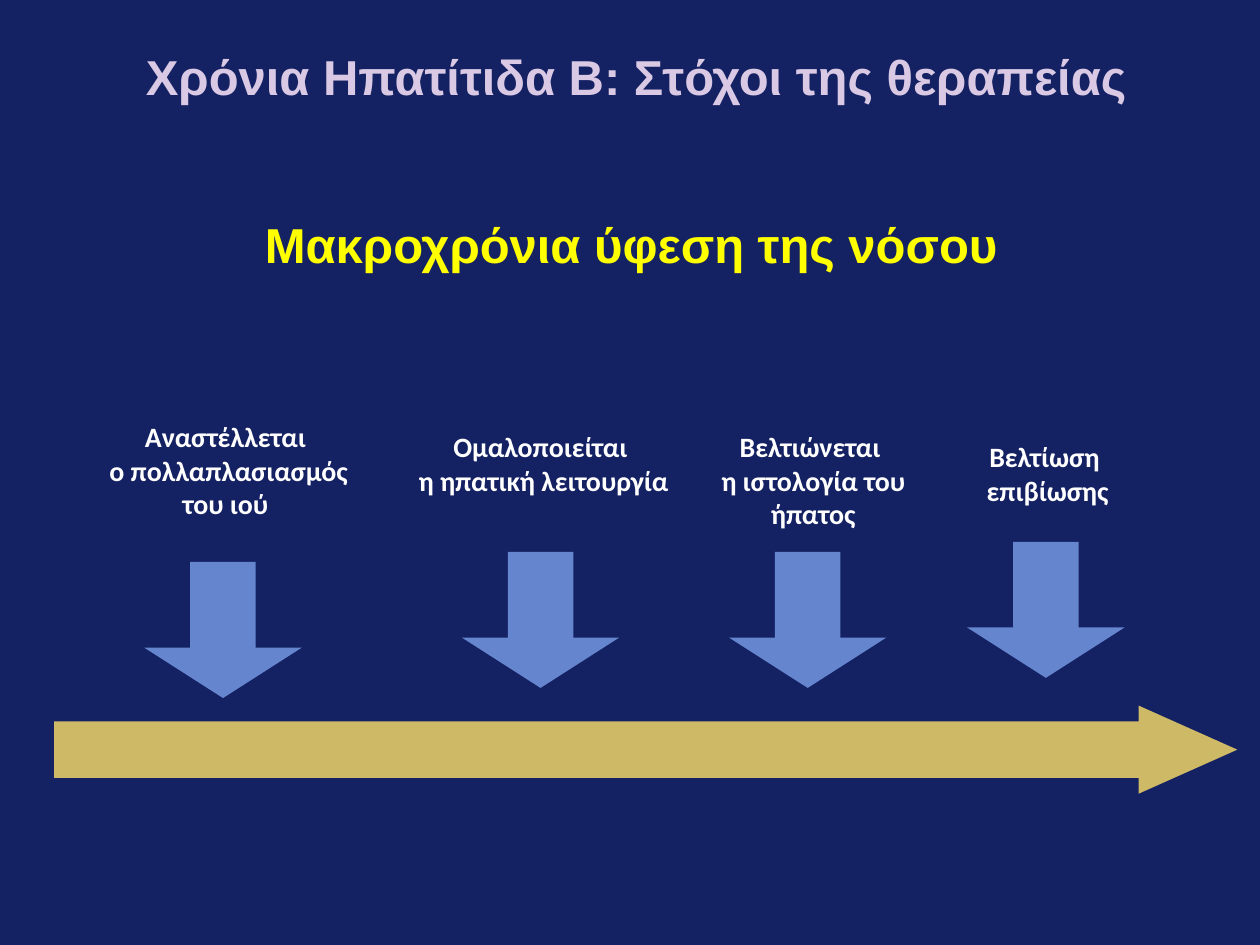
"""Build the slide on treatment goals for chronic hepatitis B."""
from pptx import Presentation
from pptx import util as u
from pptx.dml.color import RGBColor
from pptx.enum import shapes, text

NAVY = RGBColor(0x14, 0x21, 0x62)
LILAC = RGBColor(0xDA, 0xC9, 0xE4)
YELLOW = RGBColor(0xFF, 0xFF, 0x00)
WHITE = RGBColor(0xFF, 0xFF, 0xFF)
BLUE = RGBColor(0x65, 0x85, 0xCF)
GOLD = RGBColor(0xCE, 0xB9, 0x66)

WIDTH, HEIGHT = 10, 7.5
HEADINGS = [
    ("Χρόνια Ηπατίτιδα Β: Στόχοι της θεραπείας", 0.55, 0.21, LILAC),
    ("Μακροχρόνια ύφεση της νόσου", 0.51, 1.54, YELLOW),
]
GOALS = [
    {"lines": ["Αναστέλλεται", " ο πολλαπλασιασμός του ιού"],
     "label": (0.67, 2.24, 0.91), "center": 1.77, "level": 0},
    {"lines": ["Ομαλοποιείται", " η ηπατική λειτουργία"],
     "label": (3.11, 2.36, 0.64), "center": 4.29, "level": 1},
    {"lines": ["Βελτιώνεται ", "η ιστολογία του ήπατος"],
     "label": (5.47, 1.97, 0.91), "center": 6.41, "level": 1},
    {"lines": ["Βελτίωση", " επιβίωσης"],
     "label": (7.67, 1.24, 0.64), "center": 8.3, "level": 2, "wrap": False},
]
LABEL_TOP, ARROW_TOP, LEVEL_STEP = 3.28, 4.46, 0.08
STEM_WIDTH, STEM_HEIGHT = 0.52, 0.7
HEAD_WIDTH, HEAD_HEIGHT, HEAD_OFFSET = 1.25, 0.4, 0.68


def inches(*lengths):
    return [u.Inches(length) for length in lengths]


def add_text(slide, box, lines, font_name, size, color, anchor, wrap=True):
    frame = slide.shapes.add_textbox(*inches(*box)).text_frame
    frame.word_wrap = wrap
    frame.vertical_anchor = anchor
    for index, line in enumerate(lines):
        paragraph = frame.add_paragraph() if index else frame.paragraphs[0]
        paragraph.alignment = text.PP_ALIGN.CENTER
        run = paragraph.add_run()
        run.text = line
        run.font.name, run.font.size = font_name, u.Pt(size)
        run.font.bold = True
        run.font.color.rgb = color


def add_filled(parent, kind, box, color):
    shape = parent.shapes.add_shape(kind, *inches(*box))
    shape.shadow.inherit = False
    shape.fill.solid()
    shape.fill.fore_color.rgb = color
    shape.line.fill.background()
    return shape


def add_down_arrow(slide, center, top):
    group = slide.shapes.add_group_shape()
    head = add_filled(group, shapes.MSO_SHAPE.ISOSCELES_TRIANGLE,
                      (center - HEAD_WIDTH / 2, top + HEAD_OFFSET,
                       HEAD_WIDTH, HEAD_HEIGHT), BLUE)
    head.rotation = 180
    add_filled(group, shapes.MSO_SHAPE.RECTANGLE,
               (center - STEM_WIDTH / 2, top, STEM_WIDTH, STEM_HEIGHT), BLUE)


def main():
    presentation = Presentation()
    presentation.slide_width, presentation.slide_height = inches(WIDTH, HEIGHT)
    slide = presentation.slides.add_slide(presentation.slide_layouts[6])
    slide.background.fill.solid()
    slide.background.fill.fore_color.rgb = NAVY

    for heading, left, top, color in HEADINGS:
        add_text(slide, (left, top, 9, 0.79), [heading], "Arial", 28, color,
                 text.MSO_ANCHOR.MIDDLE)

    timeline = add_filled(slide, shapes.MSO_SHAPE.RIGHT_ARROW,
                          (0.43, 5.6, 9.39, 0.7), GOLD)
    timeline.adjustments[0], timeline.adjustments[1] = 0.64, 1.12

    for goal in GOALS:
        left, width, height = goal["label"]
        shift = goal["level"] * LEVEL_STEP
        add_text(slide, (left, LABEL_TOP + shift, width, height), goal["lines"],
                 "Calibri", 16, WHITE, text.MSO_ANCHOR.TOP, goal.get("wrap", True))
        add_down_arrow(slide, goal["center"], ARROW_TOP - shift)

    presentation.save("out.pptx")


if __name__ == "__main__":
    main()
